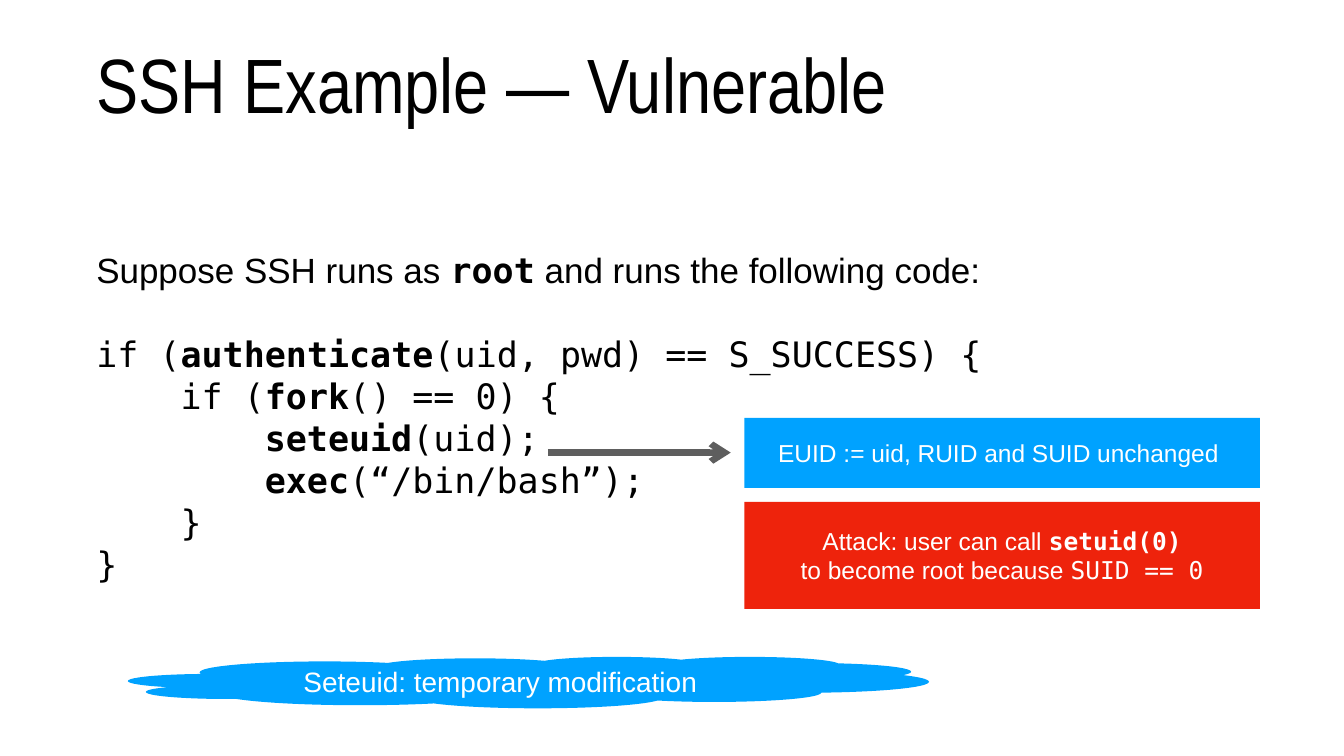
from dataclasses import dataclass

from lxml.etree import SubElement
from pptx import Presentation
from pptx.dml.color import RGBColor
from pptx.enum.shapes import MSO_CONNECTOR, MSO_SHAPE
from pptx.enum.text import MSO_ANCHOR, PP_ALIGN
from pptx.oxml.ns import qn
from pptx.util import Inches, Pt

SLIDE_WIDTH, SLIDE_HEIGHT = Inches(26.67), Inches(15)
COLORS = {"text": "000000", "light": "FFFFFF", "info": "00A2FF",
          "attack": "EE230C", "arrow": "5E5E5E"}
SANS, NARROW, MONO = "Arial", "Arial Narrow", "DejaVu Sans Mono"
CODE_SIZE = 50
INDENT = Pt(4 * 0.602 * CODE_SIZE)  # four monospaced characters


@dataclass(frozen=True)
class Box:
    """Position and size in percent of the slide."""
    left: float
    top: float
    width: float
    height: float


@dataclass(frozen=True)
class Piece:
    text: str
    font: str = SANS
    bold: bool = False


@dataclass(frozen=True)
class Line:
    pieces: tuple[Piece, ...]
    level: int = 0
    space_before: int = 0


@dataclass(frozen=True)
class Callout:
    kind: MSO_SHAPE
    box: Box
    fill: str
    size: int
    lines: tuple[Line, ...]


def across(share: float) -> int:
    return round(SLIDE_WIDTH * share / 100)


def down(share: float) -> int:
    return round(SLIDE_HEIGHT * share / 100)


def placed(box: Box) -> tuple[int, int, int, int]:
    return across(box.left), down(box.top), across(box.width), down(box.height)


def code(before: str, call: str = "", after: str = "", level: int = 0,
         space_before: int = 0) -> Line:
    """A line of code whose called function is bold."""
    pieces = (Piece(before, MONO), Piece(call, MONO, True), Piece(after, MONO))
    return Line(tuple(piece for piece in pieces if piece.text), level, space_before)


TITLE_BOX = Box(6.94, 2.6, 86.13, 16.67)
BODY_BOX = Box(6.94, 20, 88.79, 70.27)
BODY = (
    Line((Piece("Suppose SSH runs as "), Piece("root", MONO, True),
          Piece(" and runs the following code:"))),
    code("if (", "authenticate", "(uid, pwd) == S_SUCCESS) {", space_before=60),
    code("if (", "fork", "() == 0) {", level=1),
    code("", "seteuid", "(uid);", level=2),
    code("", "exec", "(“/bin/bash”);", level=2),
    code("}", level=1),
    code("}"),
)
CALLOUTS = (
    Callout(MSO_SHAPE.RECTANGLE, Box(55.38, 55.27, 38.36, 9.27), "info", 35,
            (Line((Piece("EUID := uid, RUID and SUID unchanged "),)),)),
    Callout(MSO_SHAPE.RECTANGLE, Box(55.38, 66.4, 38.36, 14.13), "attack", 35,
            (Line((Piece("Attack: user can call "), Piece("setuid(0)", MONO, True))),
             Line((Piece("to become root because "), Piece("SUID == 0", MONO))))),
    Callout(MSO_SHAPE.CLOUD, Box(9.56, 86.87, 59.54, 6.8), "info", 40,
            (Line((Piece("Seteuid: temporary modification"),)),)),
)


def write(shape, lines: tuple[Line, ...], size: int, color: str, align: PP_ALIGN,
          margin: float = 0, line_spacing=None) -> None:
    frame = shape.text_frame
    frame_format = {"word_wrap": True, "vertical_anchor": MSO_ANCHOR.MIDDLE}
    frame_format |= {f"margin_{side}": Inches(margin)
                     for side in ("left", "top", "right", "bottom")}
    for name, value in frame_format.items():
        setattr(frame, name, value)
    for index, line in enumerate(lines):
        paragraph = frame.add_paragraph() if index else frame.paragraphs[0]
        paragraph_format = {"alignment": align, "line_spacing": line_spacing,
                            "space_before": Pt(line.space_before)}
        for name, value in paragraph_format.items():
            setattr(paragraph, name, value)
        if line.level:
            paragraph._p.get_or_add_pPr().set("marL", str(line.level * INDENT))
        for piece in line.pieces:
            run = paragraph.add_run()
            run.text = piece.text
            font_format = {"name": piece.font, "size": Pt(size), "bold": piece.bold}
            for name, value in font_format.items():
                setattr(run.font, name, value)
            run.font.color.rgb = RGBColor.from_string(COLORS[color])


def draw_callout(slide, callout: Callout) -> None:
    shape = slide.shapes.add_shape(callout.kind, *placed(callout.box))
    shape.shadow.inherit = False
    shape.fill.solid()
    shape.fill.fore_color.rgb = RGBColor.from_string(COLORS[callout.fill])
    shape.line.fill.background()
    write(shape, callout.lines, callout.size, "light", PP_ALIGN.CENTER)


def draw_arrow(slide, start: float, end: float, row: float) -> None:
    arrow = slide.shapes.add_connector(MSO_CONNECTOR.STRAIGHT, across(start), down(row),
                                       across(end), down(row))
    arrow.line.color.rgb = RGBColor.from_string(COLORS["arrow"])
    arrow.line.width = Pt(9)
    SubElement(arrow.line._get_or_add_ln(), qn("a:tailEnd"), type="arrow")
    SubElement(arrow._element.spPr, qn("a:effectLst"))


def main() -> None:
    presentation = Presentation()
    presentation.slide_width, presentation.slide_height = SLIDE_WIDTH, SLIDE_HEIGHT
    slide = presentation.slides.add_slide(presentation.slide_layouts[5])

    title = slide.shapes.title
    title.left, title.top, title.width, title.height = placed(TITLE_BOX)
    write(title, (Line((Piece("SSH Example — Vulnerable", NARROW),)),), 110, "text",
          PP_ALIGN.LEFT, margin=0.06)

    body = slide.shapes.add_textbox(*placed(BODY_BOX))
    write(body, BODY, CODE_SIZE, "text", PP_ALIGN.LEFT, margin=0.06, line_spacing=Pt(60))

    draw_arrow(slide, start=40.76, end=54.37, row=59.87)
    for callout in CALLOUTS:
        draw_callout(slide, callout)
    presentation.save("out.pptx")


if __name__ == "__main__":
    main()
